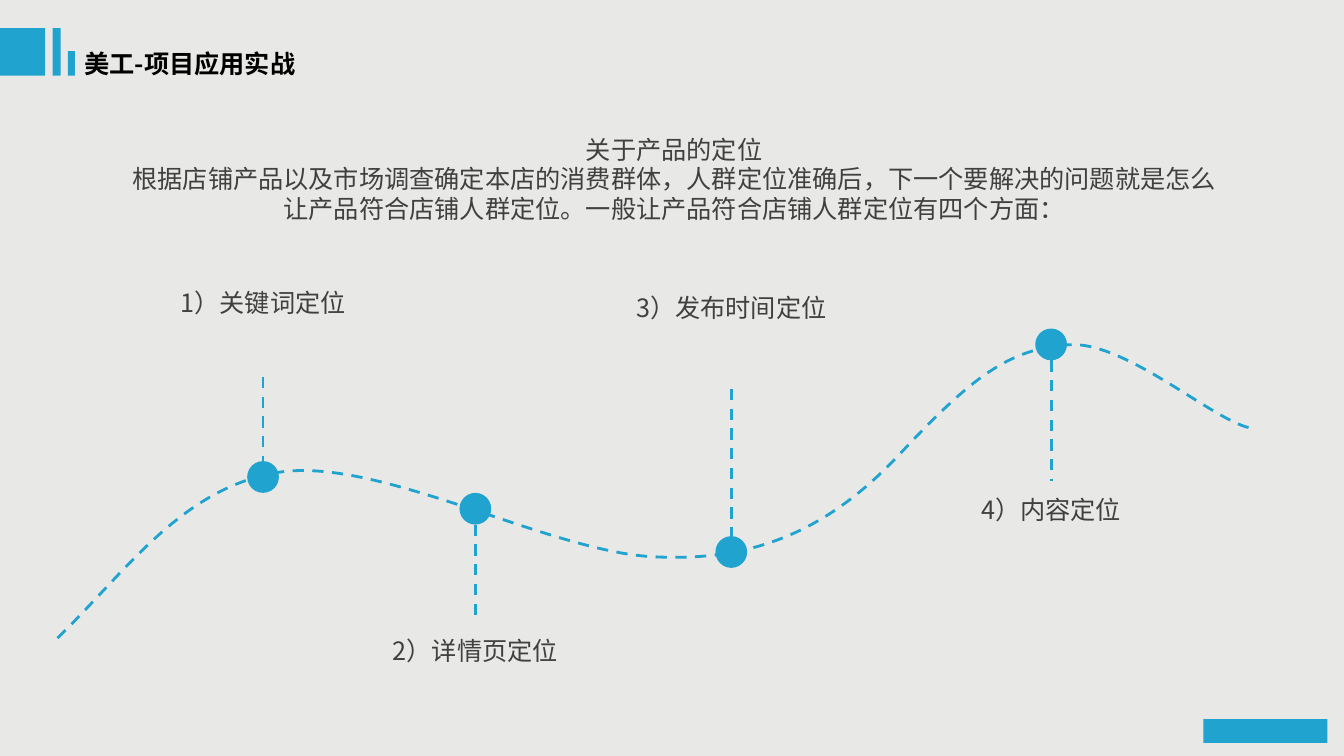
from dataclasses import dataclass

from lxml import etree
from pptx import Presentation
from pptx.dml.color import RGBColor
from pptx.enum import dml, lang, shapes, text
from pptx.oxml.ns import qn
from pptx.util import Cm, Pt


@dataclass(frozen=True)
class Theme:
    """Colours, font and sizes used on the slide."""

    accent: RGBColor = RGBColor(0x21, 0xA3, 0xD0)
    background: RGBColor = RGBColor(0xE8, 0xE8, 0xE6)
    body: RGBColor = RGBColor(0x40, 0x40, 0x40)
    title: RGBColor = RGBColor(0, 0, 0)
    font: str = "Noto Sans CJK SC"
    size: Pt = Pt(18)
    leading: Pt = Pt(21.4)
    stroke: Pt = Pt(2)


THEME = Theme()
DOT_RADIUS = 0.4
LABEL_SIZE = (5.77, 0.86)

CURVE = [
    (1.45, 16.08),
    (3.2, 14.38), (4.62, 12.24), (7.11, 11.89),
    (9.58, 11.56), (13.72, 13.82), (16.31, 14.02),
    (18.9, 14.2), (20.83, 13.41), (22.66, 11.46),
    (24.49, 9.5), (25.43, 8.79), (26.92, 8.69),
    (28.42, 8.56), (30.84, 10.85), (31.67, 10.8),
]

# label, dot centre x and y, far end of stem, top of label
MILESTONES = [
    ("1）关键词定位", 6.63, 12.02, 9.5, 7.2),
    ("2）详情页定位", 11.98, 12.82, 15.67, 15.98),
    ("3）发布时间定位", 18.43, 13.91, 9.8, 7.34),
    ("4）内容定位", 26.49, 8.68, 12.12, 12.42),
]

BARS = [
    (0, 0.71, 1.14, 1.2),
    (1.33, 0.71, 0.2, 1.2),
    (1.71, 1.29, 0.18, 0.62),
    (30.33, 18.12, 3.12, 0.6),
]

INTRO = [
    "关于产品的定位",
    "根据店铺产品以及市场调查确定本店的消费群体，人群定位准确后，下一个要解决的问题就是怎么"
    "让产品符合店铺人群定位。一般让产品符合店铺人群定位有四个方面：",
]


def style_dashes(line):
    """Give a line the dashed accent stroke."""
    line.color.rgb = THEME.accent
    line.width = THEME.stroke
    line.dash_style = dml.MSO_LINE.DASH


def add_solid(slide, kind, left, top, width, height):
    """Add a preset shape filled with the accent colour."""
    shape = slide.shapes.add_shape(kind, Cm(left), Cm(top), Cm(width), Cm(height))
    shape.shadow.inherit = False
    shape.fill.solid()
    shape.fill.fore_color.rgb = THEME.accent
    shape.line.fill.background()


def add_curve(slide, points):
    """Add a dashed curve from a start point and triples of Bézier points."""
    start, *controls = [(Cm(x), Cm(y)) for x, y in points]
    builder = slide.shapes.build_freeform(*start)
    builder.add_line_segments(controls, close=False)
    shape = builder.convert_to_shape()
    shape.shadow.inherit = False
    shape.fill.background()
    style_dashes(shape.line)
    segments = list(shape.element.iter(qn("a:lnTo")))
    outline = segments[0].getparent()
    for index, segment in enumerate(segments):
        if index % 3 == 0:
            bezier = etree.SubElement(outline, qn("a:cubicBezTo"))
        bezier.append(segment[0])
        outline.remove(segment)


def add_stem(slide, x, top, bottom):
    """Add a vertical dashed connector."""
    connector = slide.shapes.add_connector(
        shapes.MSO_CONNECTOR.STRAIGHT, Cm(x), Cm(top), Cm(x), Cm(bottom))
    style_dashes(connector.line)
    etree.SubElement(connector.element.spPr, qn("a:effectLst"))


def add_text(slide, paragraphs, *, left, top, width, height, inset,
             color=THEME.body, bold=False, align=text.PP_ALIGN.CENTER):
    """Add a wrapped text box with one run per paragraph."""
    box = slide.shapes.add_textbox(Cm(left), Cm(top), Cm(width), Cm(height))
    frame = box.text_frame
    frame.word_wrap = True
    frame.margin_top = Cm(inset)
    frame.margin_bottom = 0
    frame.text = "\n".join(paragraphs)
    for paragraph in frame.paragraphs:
        paragraph.alignment = align
        paragraph.line_spacing = THEME.leading
        font = paragraph.runs[0].font
        font.name = THEME.font
        font.size = THEME.size
        font.bold = bold
        font.color.rgb = color
        font.language_id = lang.MSO_LANGUAGE_ID.SIMPLIFIED_CHINESE
        properties = paragraph.runs[0]._r.get_or_add_rPr()
        etree.SubElement(properties, qn("a:ea"), typeface=THEME.font)


def add_milestone(slide, label, x, y, stem_end, label_top):
    """Add a dot with its stem and label centred on x."""
    add_solid(slide, shapes.MSO_SHAPE.OVAL, x - DOT_RADIUS, y - DOT_RADIUS,
              2 * DOT_RADIUS, 2 * DOT_RADIUS)
    edge = y + DOT_RADIUS if stem_end > y else y - DOT_RADIUS
    add_stem(slide, x, min(edge, stem_end), max(edge, stem_end))
    width, height = LABEL_SIZE
    add_text(slide, [label], left=x - width / 2, top=label_top,
             width=width, height=height, inset=0.04)


def main():
    """Build the slide and save it."""
    presentation = Presentation()
    presentation.slide_width = Cm(33.87)
    presentation.slide_height = Cm(19.05)
    slide = presentation.slides.add_slide(presentation.slide_layouts[6])
    slide.background.fill.solid()
    slide.background.fill.fore_color.rgb = THEME.background
    add_curve(slide, CURVE)
    for milestone in MILESTONES:
        add_milestone(slide, *milestone)
    add_text(slide, INTRO, left=2.97, top=3.18, width=28.04, height=2.57, inset=0.2)
    for bar in BARS:
        add_solid(slide, shapes.MSO_SHAPE.RECTANGLE, *bar)
    add_text(slide, ["美工-项目应用实战"], left=1.88, top=1.04, width=6.88, height=1.02,
             inset=0.19, color=THEME.title, bold=True, align=text.PP_ALIGN.LEFT)
    presentation.save("out.pptx")


if __name__ == "__main__":
    main()
